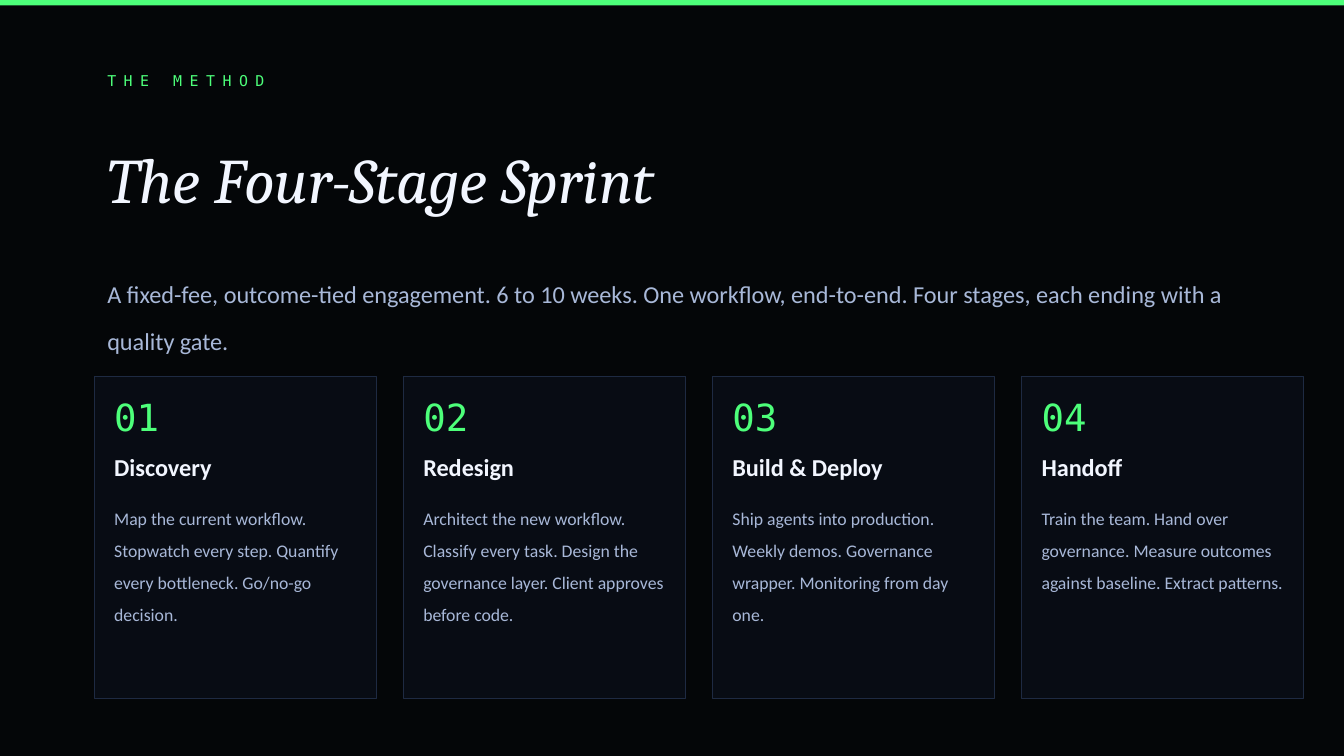
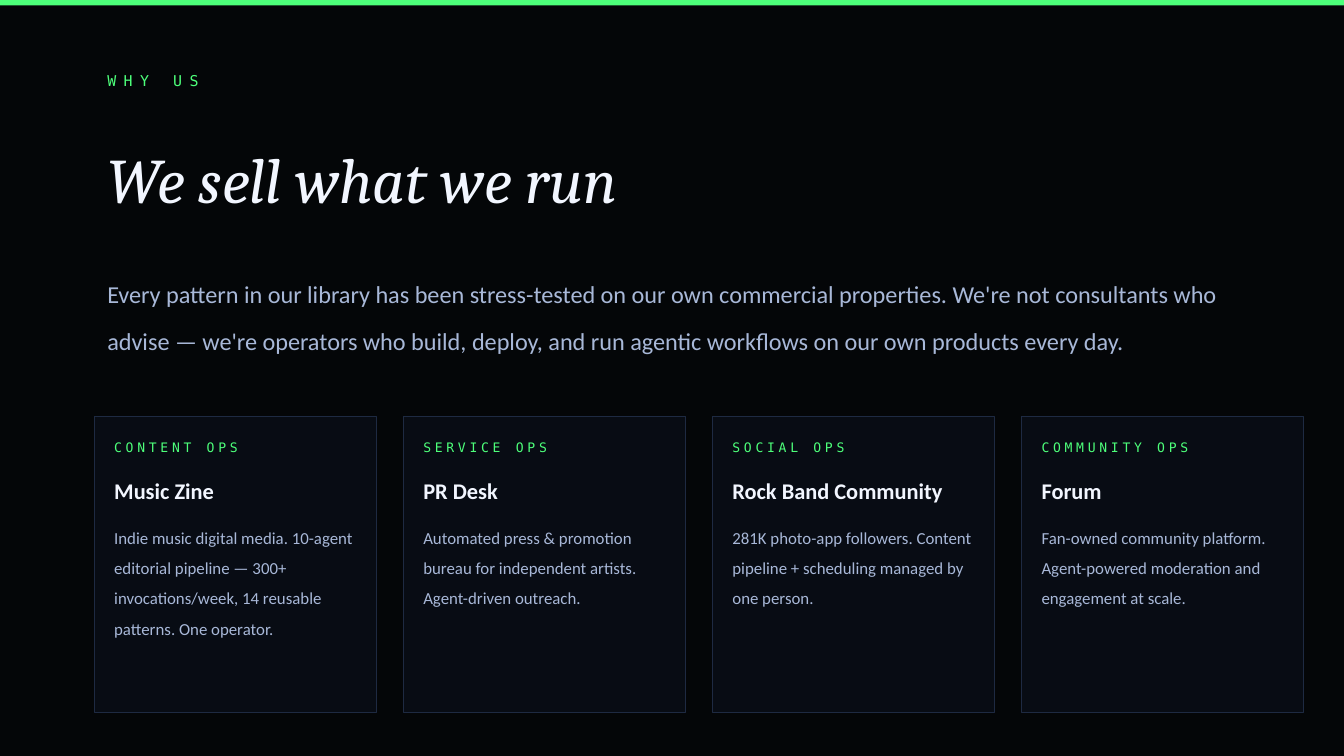
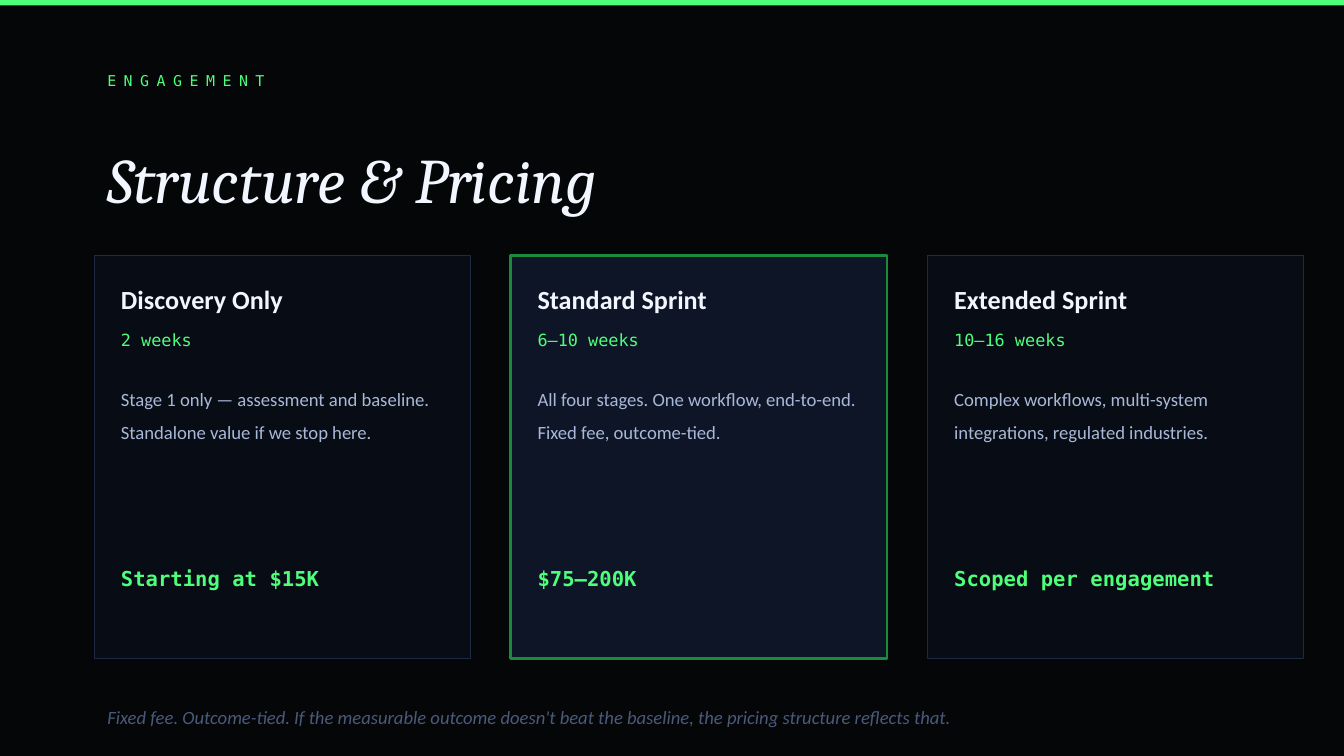
from pptx import Presentation
from pptx import util as u
from pptx.dml.color import RGBColor
from pptx.enum import shapes, text

COLORS = {
    "background": "040608",
    "card": "080C14",
    "card_border": "1E2A42",
    "featured": "0D1526",
    "featured_border": "1A8A3D",
    "accent": "4DFF7A",
    "heading": "F2F6FF",
    "body": "A8B8D8",
    "muted": "4A5A7A",
}
SANS, SERIF, MONO = "Calibri", "Cambria", "DejaVu Sans Mono"
MARGIN, CONTENT_WIDTH = 0.7, 8.6

STAGES = [
    ("Discovery", "Map the current workflow. Stopwatch every step. "
     "Quantify every bottleneck. Go/no-go decision."),
    ("Redesign", "Architect the new workflow. Classify every task. "
     "Design the governance layer. Client approves before code."),
    ("Build & Deploy", "Ship agents into production. Weekly demos. "
     "Governance wrapper. Monitoring from day one."),
    ("Handoff", "Train the team. Hand over governance. "
     "Measure outcomes against baseline. Extract patterns."),
]
PROPERTIES = [
    ("CONTENT OPS", "Music Zine", "Indie music digital media. 10-agent editorial "
     "pipeline — 300+ invocations/week, 14 reusable patterns. One operator."),
    ("SERVICE OPS", "PR Desk", "Automated press & promotion bureau for "
     "independent artists. Agent-driven outreach."),
    ("SOCIAL OPS", "Rock Band Community", "281K photo-app followers. Content "
     "pipeline + scheduling managed by one person."),
    ("COMMUNITY OPS", "Forum", "Fan-owned community platform. "
     "Agent-powered moderation and engagement at scale."),
]
OFFERS = [
    ("Discovery Only", "2 weeks", "Stage 1 only — assessment and baseline. "
     "Standalone value if we stop here.", "Starting at $15K"),
    ("Standard Sprint", "6–10 weeks", "All four stages. One workflow, end-to-end. "
     "Fixed fee, outcome-tied.", "$75–200K"),
    ("Extended Sprint", "10–16 weeks", "Complex workflows, multi-system "
     "integrations, regulated industries.", "Scoped per engagement"),
]
FEATURED_OFFER = "Standard Sprint"


def rgb(name):
    return RGBColor.from_string(COLORS[name])


def add_rect(slide, left, top, width, height, fill, border=None, weight=0.5):
    rect = slide.shapes.add_shape(
        shapes.MSO_SHAPE.RECTANGLE,
        u.Inches(left), u.Inches(top), u.Inches(width), u.Inches(height))
    rect.shadow.inherit = False
    rect.fill.solid()
    rect.fill.fore_color.rgb = rgb(fill)
    if border:
        rect.line.color.rgb = rgb(border)
        rect.line.width = u.Pt(weight)
    else:
        rect.line.fill.background()


def add_text(slide, words, left, top, width, height, size, color, font=SANS,
             bold=False, italic=False, tracking=0, leading=None, middle=True,
             inset=False):
    box = slide.shapes.add_textbox(
        u.Inches(left), u.Inches(top), u.Inches(width), u.Inches(height))
    frame = box.text_frame
    frame.word_wrap = True
    frame.vertical_anchor = (text.MSO_ANCHOR.MIDDLE if middle
                             else text.MSO_ANCHOR.TOP)
    if not inset:
        frame.margin_left = frame.margin_right = 0
        frame.margin_top = frame.margin_bottom = 0
    para = frame.paragraphs[0]
    if leading:
        para.line_spacing = leading
    span = para.add_run()
    span.text = words
    span.font.name = font
    span.font.size = u.Pt(size)
    span.font.bold = bold
    span.font.italic = italic
    span.font.color.rgb = rgb(color)
    if tracking:
        span._r.get_or_add_rPr().set("spc", str(tracking * 100))


def add_body(slide, words, left, top, width, height, size):
    add_text(slide, words, left, top, width, height, size, "body",
             leading=1.5, middle=False)


def add_prose(slide, words, top, height, size, color, italic=False):
    add_text(slide, words, MARGIN, top, CONTENT_WIDTH, height, size, color,
             italic=italic, leading=1.6, middle=False, inset=True)


def start_slide(deck, kicker, title):
    """Background, top band, kicker and title shared by every slide."""
    slide = deck.slides.add_slide(deck.slide_layouts[6])
    slide.background.fill.solid()
    slide.background.fill.fore_color.rgb = rgb("background")
    add_rect(slide, 0, 0, 10, 0.04, "accent")
    add_text(slide, kicker, MARGIN, 0.45, CONTENT_WIDTH, 0.3, 8, "accent",
             MONO, tracking=4, inset=True)
    add_text(slide, title, MARGIN, 0.8, CONTENT_WIDTH, 1, 34, "heading",
             SERIF, italic=True, leading=1.1, inset=True)
    return slide


def card_lefts(count, width, gap):
    return [MARGIN + index * (width + gap) for index in range(count)]


def add_method_slide(deck):
    slide = start_slide(deck, "THE METHOD", "The Four-Stage Sprint")
    add_prose(slide, "A fixed-fee, outcome-tied engagement. 6 to 10 weeks. "
              "One workflow, end-to-end. Four stages, each ending with a "
              "quality gate.", 1.9, 0.7, 13, "body")
    # Numbered stage cards
    lefts = card_lefts(len(STAGES), 2.1, 0.2)
    for number, (left, (name, detail)) in enumerate(zip(lefts, STAGES), 1):
        inner = left + 0.15
        add_rect(slide, left, 2.8, 2.1, 2.4, "card", "card_border")
        add_text(slide, f"{number:02}", inner, 2.9, 1, 0.4, 20, "accent", MONO)
        add_text(slide, name, inner, 3.3, 1.8, 0.35, 13, "heading", bold=True)
        add_body(slide, detail, inner, 3.7, 1.8, 1.35, 9.5)


def add_why_us_slide(deck):
    slide = start_slide(deck, "WHY US", "We sell what we run")
    add_prose(slide, "Every pattern in our library has been stress-tested on our "
              "own commercial properties. We're not consultants who advise — "
              "we're operators who build, deploy, and run agentic workflows on "
              "our own products every day.", 1.9, 0.9, 13, "body")
    # Property cards
    lefts = card_lefts(len(PROPERTIES), 2.1, 0.2)
    for left, (tag, name, detail) in zip(lefts, PROPERTIES):
        inner = left + 0.15
        add_rect(slide, left, 3.1, 2.1, 2.2, "card", "card_border")
        add_text(slide, tag, inner, 3.2, 1.8, 0.25, 7, "accent", MONO, tracking=2)
        add_text(slide, name, inner, 3.5, 1.8, 0.3, 12, "heading", bold=True)
        add_body(slide, detail, inner, 3.85, 1.8, 1.3, 9)


def add_pricing_slide(deck):
    slide = start_slide(deck, "ENGAGEMENT", "Structure & Pricing")
    # Offer cards, one of them featured
    lefts = card_lefts(len(OFFERS), 2.8, 0.3)
    for left, (name, duration, detail, price) in zip(lefts, OFFERS):
        inner = left + 0.2
        featured = name == FEATURED_OFFER
        style = "featured" if featured else "card"
        add_rect(slide, left, 1.9, 2.8, 3, style, style + "_border",
                 1.5 if featured else 0.5)
        add_text(slide, name, inner, 2.05, 2.4, 0.35, 14, "heading", bold=True)
        add_text(slide, duration, inner, 2.4, 2.4, 0.25, 9, "accent", MONO)
        add_body(slide, detail, inner, 2.8, 2.4, 1.2, 10)
        add_text(slide, price, inner, 4.1, 2.4, 0.4, 11, "accent", MONO, bold=True)
    # Closing note
    add_prose(slide, "Fixed fee. Outcome-tied. If the measurable outcome doesn't "
              "beat the baseline, the pricing structure reflects that.",
              5.1, 0.4, 10, "muted", italic=True)


def main():
    deck = Presentation()
    deck.slide_width = u.Inches(10)
    deck.slide_height = deck.slide_width * 9 // 16
    add_method_slide(deck)
    add_why_us_slide(deck)
    add_pricing_slide(deck)
    deck.save("out.pptx")


if __name__ == "__main__":
    main()
